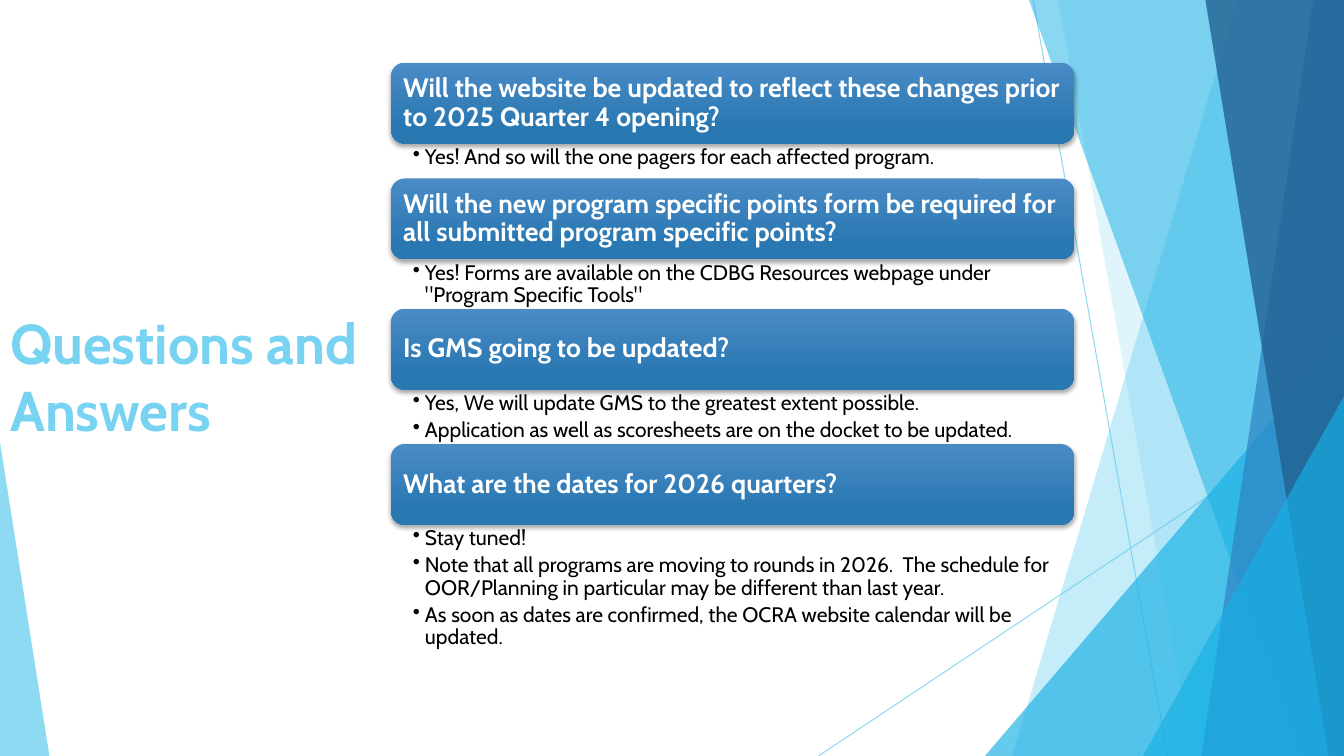
from pptx import Presentation
from pptx.dml.color import RGBColor
from pptx.enum.shapes import MSO_CONNECTOR, MSO_SHAPE
from pptx.enum.text import MSO_ANCHOR, PP_ALIGN
from pptx.oxml.ns import qn
from pptx.util import Pt
from lxml.etree import SubElement

WIDTH, HEIGHT = 960, 540
FONT = "Cabin"
SKY, CYAN, BLUE, NAVY = "5FCBEF", "17B0E4", "2E83C3", "226292"
LIST_LEFT, LIST_TOP, LIST_WIDTH = 279.4, 44.7, 487.8
QUESTION_HEIGHT = 57.8

QUESTIONS = [
    ("Will the website be updated to reflect these changes prior to 2025 Quarter 4 opening?", 25,
     ["Yes! And so will the one pagers for each affected program."]),
    ("Will the new program specific points form be required for all submitted program specific points?", 35.2,
     ['Yes! Forms are available on the CDBG Resources webpage under "Program Specific Tools"']),
    ("Is GMS going to be updated?", 38.8,
     ["Yes, We will update GMS to the greatest extent possible.",
      "Application as well as scoresheets are on the docket to be updated."]),
    ("What are the dates for 2026 quarters?", 90,
     ["Stay tuned!",
      "Note that all programs are moving to rounds in 2026.  The schedule for OOR/Planning in particular may be different than last year.",
      "As soon as dates are confirmed, the OCRA website calendar will be updated."]),
]


def rgb(value):
    return RGBColor.from_string(value)


def set_opacity(sp, percent):
    for color in sp._element.spPr.iter(qn("a:srgbClr")):
        SubElement(color, qn("a:alpha"), val=str(percent * 1000))


def set_margins(tf, left, top, right, bottom):
    tf.margin_left, tf.margin_top = Pt(left), Pt(top)
    tf.margin_right, tf.margin_bottom = Pt(right), Pt(bottom)


def write(p, text, size=15, color="000000", bold=False, spacing=0.9, after=0, bullet=False):
    p.alignment = PP_ALIGN.LEFT
    p.line_spacing = spacing
    p.space_after = Pt(after)
    r = p.add_run()
    r.text = text
    r.font.name = FONT
    r.font.size = Pt(size)
    r.font.bold = bold
    r.font.color.rgb = rgb(color)
    if bullet:
        pPr = p._p.get_or_add_pPr()
        pPr.set("marL", str(Pt(8.64)))
        pPr.set("indent", str(-Pt(8.64)))
        SubElement(pPr, qn("a:buChar"), char="•")


def paint(sp, color, opacity):
    sp.shadow.inherit = False
    sp.fill.solid()
    sp.fill.fore_color.rgb = rgb(color)
    sp.line.fill.background()
    set_opacity(sp, opacity)


def add_facet(s, points, color, opacity):
    corners = [(Pt(x), Pt(y)) for x, y in points]
    builder = s.shapes.build_freeform(*corners[0], scale=1.0)
    builder.add_line_segments(corners[1:], close=True)
    paint(builder.convert_to_shape(), color, opacity)


def add_triangle(s, left, top, width, apex, color, opacity):
    sp = s.shapes.add_shape(MSO_SHAPE.ISOSCELES_TRIANGLE, Pt(left), Pt(top),
                            Pt(width), Pt(HEIGHT - top))
    sp.adjustments[0] = apex
    paint(sp, color, opacity)


def add_ray(s, x1, y1, x2, y2):
    line = s.shapes.add_connector(MSO_CONNECTOR.STRAIGHT, Pt(x1), Pt(y1), Pt(x2), Pt(y2))
    line.line.color.rgb = rgb(SKY)
    line.line.width = Pt(0.75)
    set_opacity(line, 70)
    SubElement(line._element.spPr, qn("a:effectLst"))


def add_right_facet(s, top_x, bottom_x, color, opacity):
    add_facet(s, [(top_x, 0), (WIDTH, 0), (WIDTH, HEIGHT), (bottom_x, HEIGHT)], color, opacity)


def add_background(s):
    add_ray(s, 738, 0, 834, HEIGHT)
    add_ray(s, WIDTH, 290, 584.6, HEIGHT)
    add_right_facet(s, 884, 723, SKY, 36)
    add_right_facet(s, 756, 852, SKY, 20)
    add_triangle(s, 703.5, 240, 256.5, 1, CYAN, 66)
    add_right_facet(s, 735, 929.5, CYAN, 50)
    add_right_facet(s, 938, 858.2, BLUE, 70)
    add_right_facet(s, 861, 949, NAVY, 80)
    add_triangle(s, 816.5, 283, 143.5, 1, CYAN, 66)
    add_triangle(s, 0, 316, 35.3, 0, SKY, 70)


def add_title(s, text):
    title = s.shapes.title
    title.left, title.top, title.width, title.height = Pt(0), Pt(121), Pt(279.4), Pt(295)
    tf = title.text_frame
    tf.word_wrap = True
    tf.vertical_anchor = MSO_ANCHOR.MIDDLE
    write(tf.paragraphs[0], text, size=40, color="77D3F1", bold=True, spacing=1.0)


def add_question(s, top, text):
    sp = s.shapes.add_shape(MSO_SHAPE.ROUNDED_RECTANGLE, Pt(LIST_LEFT), Pt(top),
                            Pt(LIST_WIDTH), Pt(QUESTION_HEIGHT))
    sp.fill.gradient()
    sp.fill.gradient_angle = 270
    for stop, (position, color) in zip(sp.fill.gradient_stops, [(0, "4A8BC6"), (0.78, "2A78B2")]):
        stop.position = position
        stop.color.rgb = rgb(color)
    sp.line.fill.background()
    sp.shadow.inherit = False
    effects = sp._element.spPr.find(qn("a:effectLst"))
    shadow = SubElement(effects, qn("a:outerShdw"), blurRad=str(Pt(3)), dist=str(Pt(2)),
                        dir="5400000", algn="ctr", rotWithShape="0")
    color = SubElement(shadow, qn("a:srgbClr"), val="000000")
    SubElement(color, qn("a:alpha"), val="35000")
    tf = sp.text_frame
    tf.word_wrap = True
    tf.vertical_anchor = MSO_ANCHOR.MIDDLE
    set_margins(tf, 5.76, 5.76, 5.76, 5.76)
    write(tf.paragraphs[0], text, size=19, color="FFFFFF", bold=True)


def add_answers(s, top, height, answers):
    box = s.shapes.add_textbox(Pt(LIST_LEFT), Pt(top), Pt(LIST_WIDTH), Pt(height))
    tf = box.text_frame
    tf.word_wrap = True
    set_margins(tf, 15.5, 1.9, 10.7, 1.9)
    for i, answer in enumerate(answers):
        p = tf.add_paragraph() if i else tf.paragraphs[0]
        write(p, answer, after=3, bullet=True)


def main():
    prs = Presentation()
    prs.slide_width, prs.slide_height = Pt(WIDTH), Pt(HEIGHT)
    s = prs.slides.add_slide(prs.slide_layouts[5])
    add_background(s)
    add_title(s, "Questions and Answers")
    top = LIST_TOP
    for question, height, answers in QUESTIONS:
        add_question(s, top, question)
        add_answers(s, top + QUESTION_HEIGHT, height, answers)
        top += QUESTION_HEIGHT + height
    prs.save("out.pptx")


if __name__ == "__main__":
    main()
